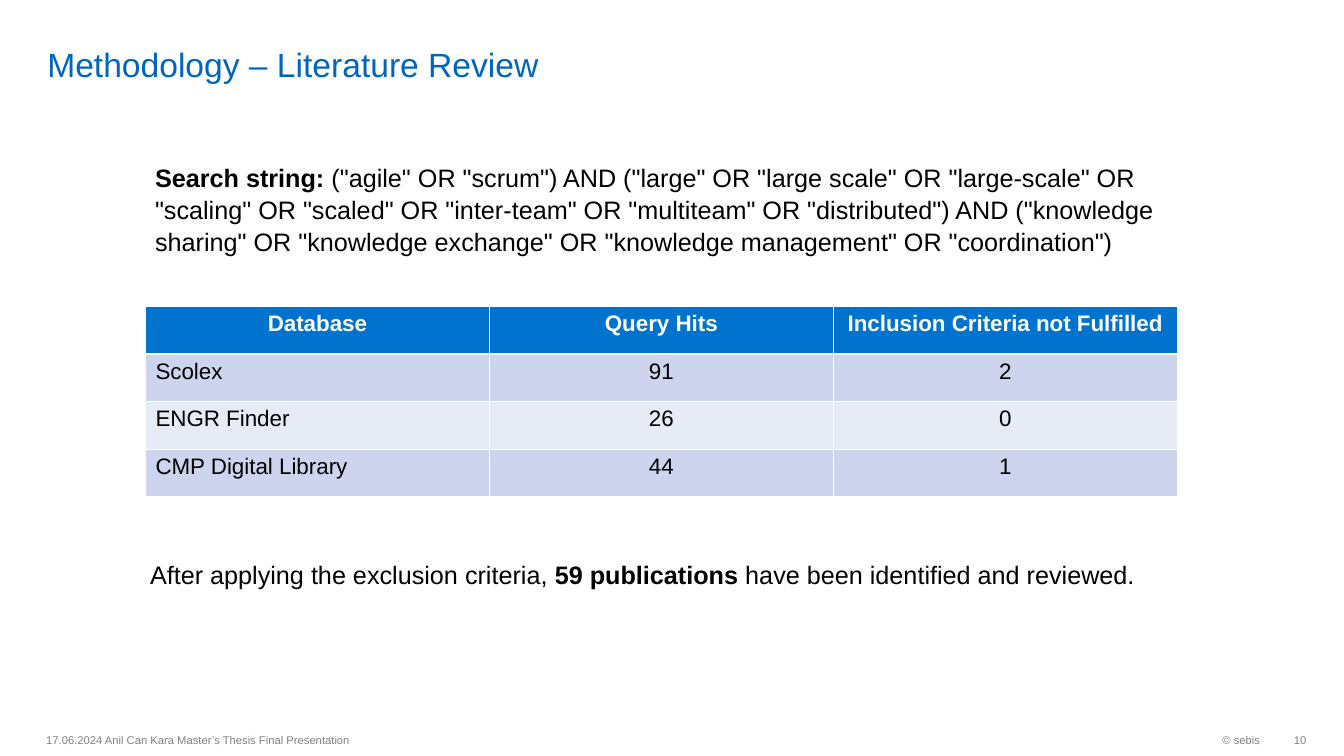
from pptx import Presentation
from pptx.dml.color import RGBColor
from pptx.enum.text import MSO_ANCHOR, MSO_AUTO_SIZE, PP_ALIGN
from pptx.util import Pt

LEFT, MID, RIGHT = PP_ALIGN.LEFT, PP_ALIGN.CENTER, PP_ALIGN.RIGHT
TOP, CENTER, BOTTOM = MSO_ANCHOR.TOP, MSO_ANCHOR.MIDDLE, MSO_ANCHOR.BOTTOM
FIXED = MSO_AUTO_SIZE.NONE
COLORS = {
    "title": "0065BD", "head": "0073CF", "odd": "CCD5ED", "even": "E7EBF6",
    "text": "000000", "white": "FFFFFF", "foot": "808080",
}
ROWS = [
    ("Database", "Query Hits", "Inclusion Criteria not Fulfilled"),
    ("Scolex", "91", "2"),
    ("ENGR Finder", "26", "0"),
    ("CMP Digital Library", "44", "1"),
]
SEARCH = [
    ("Search string: ", True),
    ('("agile" OR "scrum") AND ("large" OR "large scale" OR "large-scale" OR '
     '"scaling" OR "scaled" OR "inter-team" OR "multiteam" OR "distributed") '
     'AND ("knowledge sharing" OR "knowledge exchange" OR '
     '"knowledge management" OR "coordination")', False),
]
RESULT = [
    ("After applying the exclusion criteria, ", False),
    ("59 publications ", True),
    ("have been identified and reviewed.", False),
]


def color(name):
    return RGBColor.from_string(COLORS[name])


def write(frame, text, size=18, ink="text", bold=False, align=LEFT, space=1):
    para = frame.paragraphs[0]
    para.alignment = align
    para.line_spacing = space
    parts = [(text, bold)] if isinstance(text, str) else text
    for words, strong in parts:
        run = para.add_run()
        run.text = words
        run.font.name = "Arial"
        run.font.size = Pt(size)
        run.font.bold = strong
        run.font.color.rgb = color(ink)


def add_text(slide, box, text, anchor=TOP, inset=7.2, **style):
    frame = slide.shapes.add_textbox(*map(Pt, box)).text_frame
    frame.word_wrap = True
    frame.vertical_anchor = anchor
    frame.margin_right = Pt(inset)
    write(frame, text, **style)


def add_title(slide, box, text):
    title = slide.shapes.title
    title.left, title.top, title.width, title.height = map(Pt, box)
    frame = title.text_frame
    frame.auto_size = FIXED
    frame.vertical_anchor = BOTTOM
    frame.margin_top = frame.margin_bottom = 0
    write(frame, text, size=24, ink="title")


def add_grid(slide, box, rows):
    table = slide.shapes.add_table(len(rows), len(rows[0]), *map(Pt, box)).table
    for i, row in enumerate(rows):
        head = i == 0
        fill = "head" if head else "odd" if i % 2 else "even"
        for j, text in enumerate(row):
            cell = table.cell(i, j)
            cell.fill.solid()
            cell.fill.fore_color.rgb = color(fill)
            write(cell.text_frame, text, size=16, bold=head,
                  ink="white" if head else "text",
                  align=MID if head or j else LEFT)


def add_foot(slide, box):
    left, top, width, height = box
    style = {"anchor": CENTER, "size": 8, "ink": "foot"}
    add_text(slide, (left, top, 453.6, height),
             "17.06.2024 Anil Can Kara Master’s Thesis Final Presentation", **style)
    end = left + width
    add_text(slide, (end - 194.4, top, 168.5, height), "© sebis",
             align=RIGHT, **style)
    add_text(slide, (end - 25.9, top, 25.9, height), "10",
             align=RIGHT, inset=0, **style)


def main():
    deck = Presentation()
    deck.slide_width, deck.slide_height = Pt(960), Pt(540)
    slide = deck.slides.add_slide(deck.slide_layouts[5])
    add_title(slide, (26.6, 3.6, 833.8, 56.9), "Methodology – Literature Review")
    add_text(slide, (103.7, 111.6, 731.5, 94.3), SEARCH, space=1.05)
    add_grid(slide, (103.9, 218.9, 737.1, 136), ROWS)
    add_text(slide, (100.1, 394.6, 731.5, 51.1), RESULT, space=1.05)
    add_foot(slide, (25.9, 517.3, 907.2, 23))
    deck.save("out.pptx")


if __name__ == "__main__":
    main()
